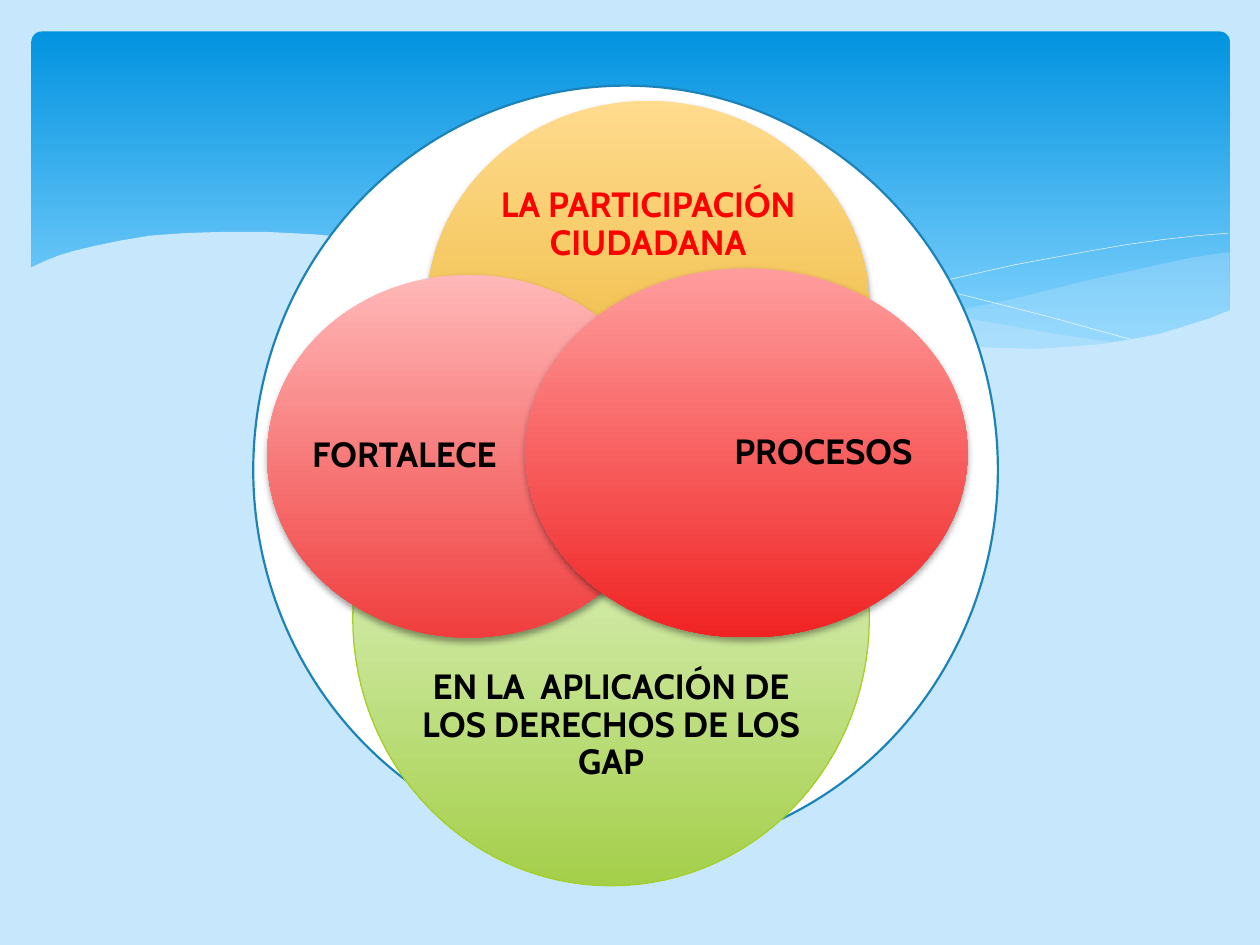
import math
from typing import NamedTuple

import pptx
import pptx.dml.color
import pptx.enum.dml
import pptx.enum.shapes
import pptx.enum.text
import pptx.oxml.ns
import pptx.util
from lxml import etree

Inches = pptx.util.Inches
qn = pptx.oxml.ns.qn
SKY = "C6E7FC"


class Wave(NamedTuple):
    points: list
    fill: str = ""
    alpha: int = 100


class Bubble(NamedTuple):
    text: str
    box: tuple
    inset: tuple
    stops: list
    ink: str = "000000"
    edge: str = ""


WAVES = [
    Wave([(9.76, 2), (9.48, 2.04), (9.06, 2.13), (8.61, 2.23), (8.05, 2.37),
          (7.53, 2.48), (7.06, 2.57), (6.61, 2.65), (6.91, 2.69), (7.32, 2.74),
          (7.69, 2.77), (8.14, 2.78), (8.54, 2.76), (8.89, 2.72), (9.21, 2.65),
          (9.49, 2.57), (9.76, 2.47)], SKY, 29),
    Wave([(8.93, 2.73), (8.37, 2.65), (7.75, 2.54), (7.06, 2.4), (6.29, 2.22),
          (5.84, 2.11), (5.41, 2.03), (5.02, 1.96), (4.65, 1.91), (4.2, 1.87),
          (3.8, 1.85), (3.44, 1.86), (3.13, 1.88), (2.86, 1.91), (3.42, 1.99),
          (4.04, 2.11), (4.91, 2.32), (5.66, 2.48), (6.34, 2.61), (6.95, 2.7),
          (7.48, 2.76), (7.96, 2.78), (8.48, 2.77)], SKY, 40),
    Wave([(3.09, 1.95), (3.44, 1.9), (3.87, 1.87), (4.33, 1.87), (4.89, 1.9),
          (5.33, 1.94), (5.82, 2), (6.36, 2.08), (6.95, 2.19), (7.6, 2.33),
          (8.31, 2.51), (9.07, 2.72)]),
    Wave([(6.13, 2.57), (6.53, 2.46), (6.95, 2.35), (7.48, 2.23), (8.06, 2.1),
          (8.66, 1.99), (8.95, 1.94), (9.24, 1.9), (9.51, 1.87), (9.75, 1.85)]),
    Wave([(9.77, 2.46), (9.59, 2.53), (9.4, 2.59), (9.2, 2.65), (8.99, 2.69),
          (8.75, 2.73), (8.5, 2.75), (8.23, 2.77), (7.93, 2.76), (7.61, 2.75),
          (7.26, 2.72), (6.88, 2.68), (6.48, 2.62), (6.03, 2.54), (5.55, 2.45),
          (5.03, 2.33), (4.47, 2.2), (3.91, 2.07), (3.4, 1.97), (2.92, 1.9),
          (2.5, 1.86), (2.11, 1.84), (1.77, 1.84), (1.46, 1.85), (1.19, 1.87),
          (0.95, 1.91), (0.76, 1.95), (0.59, 1.99), (0.46, 2.03), (0.36, 2.07),
          (0.23, 2.13), (0.23, 3.29), (9.77, 3.29)], SKY),
]

BUBBLES = [
    Bubble("EN LA  APLICACIÓN DE LOS DERECHOS DE LOS GAP", (2.8, 2.78, 4.1, 4.25),
           (0.4, 2.27, 0.4, 0.56),
           [(0, "FFFFFF"), (44, "D1EAA7"), (100, "A4CF4A")], edge="A5D028"),
    Bubble("LA PARTICIPACIÓN CIUDADANA", (3.39, 0.8, 3.51, 3.28),
           (0.38, 0.43, 0.38, 1.74), [(0, "FFDB8E"), (100, "E6AD22")], "FF0000"),
    Bubble("FORTALECE", (2.12, 2.18, 3.2, 2.88), (0.16, 0.34, 1.18, 0.34),
           [(0, "FFB8B8"), (100, "F03E3E")]),
    Bubble("PROCESOS", (4.17, 2.13, 3.51, 2.93), (1.42, 0.37, 0.2, 0.37),
           [(0, "FF9D9D"), (100, "F02323")]),
]


def rgb(code: str) -> pptx.dml.color.RGBColor:
    """Turn a hex string into a colour."""
    return pptx.dml.color.RGBColor.from_string(code)


def paint(shape, code: str, alpha: int = 100) -> None:
    """Fill a shape with one colour, or with none."""
    if not code:
        shape.fill.background()
        return
    shape.fill.solid()
    shape.fill.fore_color.rgb = rgb(code)
    if alpha < 100:
        tone = shape._element.spPr.find(".//" + qn("a:srgbClr"))
        etree.SubElement(tone, qn("a:alpha"), val=str(alpha * 1000))


def shade(shape, stops: list) -> None:
    """Fill a shape with a gradient that runs from top to bottom."""
    shape.fill.gradient()
    shape.fill.gradient_angle = 270
    ramp = shape._element.spPr.find(".//" + qn("a:gsLst"))
    for old in list(ramp):
        ramp.remove(old)
    for place, code in stops:
        stop = etree.SubElement(ramp, qn("a:gs"), pos=str(place * 1000))
        etree.SubElement(stop, qn("a:srgbClr"), val=code)


def edge(shape, code: str, width: float = 0.75) -> None:
    """Outline a shape, or leave it without a line."""
    if code:
        shape.line.color.rgb = rgb(code)
        shape.line.width = pptx.util.Pt(width)
    else:
        shape.line.fill.background()


def cast(shape) -> None:
    """Give a shape a soft shadow below."""
    effects = shape._element.spPr.find(qn("a:effectLst"))
    outer = etree.SubElement(effects, qn("a:outerShdw"), blurRad="50800",
                             dist="25400", dir="5400000", rotWithShape="0")
    tone = etree.SubElement(outer, qn("a:srgbClr"), val="000000")
    etree.SubElement(tone, qn("a:alpha"), val="38000")


def trace(slide, points: list, close: bool):
    """Build a freeform through points given in inches."""
    first, *rest = [(Inches(x), Inches(y)) for x, y in points]
    pen = slide.shapes.build_freeform(*first)
    pen.add_line_segments(rest, close=close)
    shape = pen.convert_to_shape()
    shape.shadow.inherit = False
    return shape


def preset(slide, kind, *box: float):
    """Add a preset shape without a shadow."""
    shape = slide.shapes.add_shape(kind, *map(Inches, box))
    shape.shadow.inherit = False
    return shape


def draw_wave(slide, wave: Wave) -> None:
    """Draw a filled wave or a thin white one."""
    shape = trace(slide, wave.points, bool(wave.fill))
    paint(shape, wave.fill, wave.alpha)
    edge(shape, "" if wave.fill else "FFFFFF", 0.25)


def draw_bubble(slide, bubble: Bubble) -> None:
    """Draw an ellipse whose text sits in the part left uncovered."""
    left, top, width, height = bubble.box
    turns = [math.radians(step * 3) for step in range(120)]
    points = [(left + width / 2 * (1 - math.cos(a)),
               top + height / 2 * (1 - math.sin(a))) for a in turns]
    shape = trace(slide, points, True)
    shade(shape, bubble.stops)
    edge(shape, bubble.edge)
    if not bubble.edge:
        cast(shape)
    frame = shape.text_frame
    frame.word_wrap = True
    frame.vertical_anchor = pptx.enum.text.MSO_ANCHOR.MIDDLE
    (frame.margin_left, frame.margin_top,
     frame.margin_right, frame.margin_bottom) = map(Inches, bubble.inset)
    para = frame.paragraphs[0]
    para.text = bubble.text
    para.alignment = pptx.enum.text.PP_ALIGN.CENTER
    para.line_spacing = 0.9
    para.font.name = "Cabin"
    para.font.size = pptx.util.Pt(20)
    para.font.bold = True
    para.font.color.rgb = rgb(bubble.ink)


def main() -> None:
    """Build the slide and save it."""
    deck = pptx.Presentation()
    deck.slide_width, deck.slide_height = Inches(10), Inches(7.5)
    slide = deck.slides.add_slide(deck.slide_layouts[6])
    slide.background.fill.solid()
    slide.background.fill.fore_color.rgb = rgb(SKY)
    kinds = pptx.enum.shapes.MSO_SHAPE
    banner = preset(slide, kinds.ROUNDED_RECTANGLE, 0.25, 0.25, 9.51, 2.7)
    banner.adjustments[0] = 0.03
    shade(banner, [(0, "0293E0"), (90, "83D3FE")])
    edge(banner, "")
    for wave in WAVES:
        draw_wave(slide, wave)
    disc = preset(slide, kinds.OVAL, 2.01, 0.68, 5.91, 6.1)
    paint(disc, "FFFFFF")
    edge(disc, "1C83B9", 1.25)
    for bubble in BUBBLES:
        draw_bubble(slide, bubble)
    deck.save("out.pptx")


if __name__ == "__main__":
    main()
